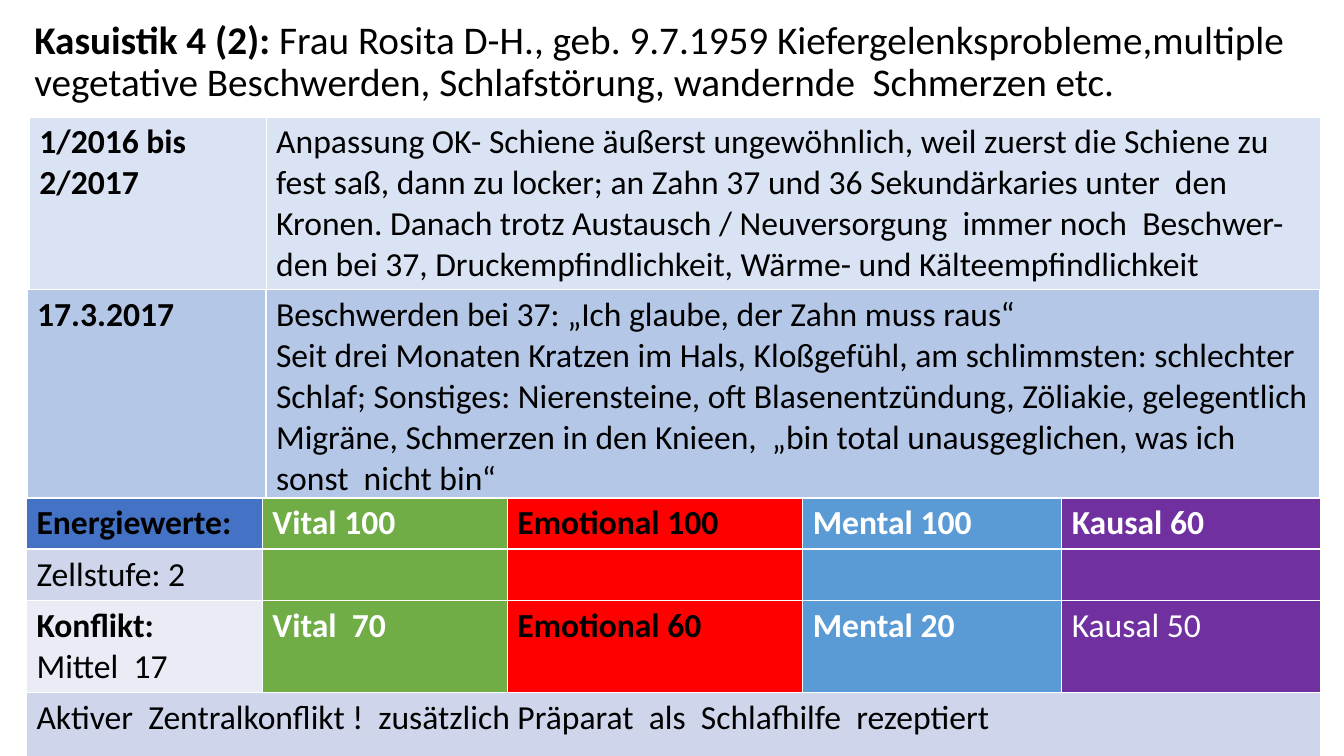
import pptx
import pptx.util
import pptx.dml.color
import pptx.enum.text

Pt = pptx.util.Pt
COLOURS = {
    "black": "000000", "white": "FFFFFF", "pale": "DAE3F3", "light": "B4C7E7",
    "blue": "4472C4", "green": "70AD47", "red": "FF0000", "sky": "5B9BD5",
    "purple": "7030A0", "band": "CFD5EA", "faint": "E9EBF5",
}


def add_span(para, text, bold, colour="black", size=24):
    span = para.add_run()
    span.text = text
    span.font.name = "Calibri"
    span.font.size = Pt(size)
    span.font.bold = bold
    span.font.color.rgb = pptx.dml.color.RGBColor.from_string(COLOURS[colour])


def add_grid(page, left, top, widths, heights, rows):
    frame = page.shapes.add_table(len(heights), len(widths), Pt(left), Pt(top),
                                  Pt(sum(widths)), Pt(sum(heights)))
    grid = frame.table
    for column, width in zip(grid.columns, widths):
        column.width = Pt(width)
    for line, height in zip(grid.rows, heights):
        line.height = Pt(height)
    for r, cells in enumerate(rows):
        for c, (fill, colour, lines) in enumerate(cells):
            cell = grid.cell(r, c)
            cell.fill.solid()
            cell.fill.fore_color.rgb = pptx.dml.color.RGBColor.from_string(COLOURS[fill])
            for i, (text, bold) in enumerate(lines):
                box = cell.text_frame
                para = box.add_paragraph() if i else box.paragraphs[0]
                add_span(para, text, bold, colour)
    return grid


deck = pptx.Presentation()
deck.slide_width = Pt(960)
deck.slide_height = Pt(540)
page = deck.slides.add_slide(deck.slide_layouts[5])

title = page.shapes.title
title.left, title.top, title.width, title.height = Pt(17.3), Pt(-7.2), Pt(928), Pt(104.4)
box = title.text_frame
box.word_wrap = True
box.auto_size = pptx.enum.text.MSO_AUTO_SIZE.NONE
box.vertical_anchor = pptx.enum.text.MSO_ANCHOR.MIDDLE
para = box.paragraphs[0]
para.alignment = pptx.enum.text.PP_ALIGN.LEFT
para.line_spacing = 0.9
add_span(para, "Kasuistik 4 (2):", True, size=28)
add_span(para, " Frau Rosita D-H., geb. 9.7.1959 Kiefergelenksprobleme,multiple "
         "vegetative Beschwerden, Schlafstörung, wandernde  Schmerzen etc.", False, size=28)

add_grid(page, 20.9, 83.5, [169.2, 753.1], [123.1], [[
    ("pale", "black", [("1/2016 bis  2/2017", True)]),
    ("pale", "black", [(
        "Anpassung OK- Schiene äußerst ungewöhnlich, weil zuerst die Schiene zu fest saß, "
        "dann zu locker; an Zahn 37 und 36 Sekundärkaries unter  den Kronen. Danach trotz "
        "Austausch / Neuversorgung  immer noch  Beschwer-den bei 37, Druckempfindlichkeit, "
        "Wärme- und Kälteempfindlichkeit", False)]),
]])

add_grid(page, 19.4, 206.6, [170.6, 752.4], [151.2], [[
    ("light", "black", [("17.3.2017", True)]),
    ("light", "black", [
        ("Beschwerden bei 37: „Ich glaube, der Zahn muss raus“", False),
        ("Seit drei Monaten Kratzen im Hals, Kloßgefühl, am schlimmsten: schlechter Schlaf; "
         "Sonstiges: Nierensteine, oft Blasenentzündung, Zöliakie, gelegentlich Migräne, "
         "Schmerzen in den Knieen,  „bin total unausgeglichen, was ich sonst  nicht bin“", False),
    ]),
]])

levels = [("green", "white"), ("red", "black"), ("sky", "white"), ("purple", "white")]
energy = ["Vital 100", "Emotional 100", "Mental 100", "Kausal 60"]
conflict = [("Vital  70", True), ("Emotional 60", True), ("Mental 20", True), ("Kausal 50", False)]
values = add_grid(page, 18.9, 355.7, [168.5, 175, 211, 185, 185], [32.4, 32.4, 59, 52.6], [
    [("blue", "black", [("Energiewerte:", True)])]
    + [(*level, [(text, True)]) for level, text in zip(levels, energy)],
    [("band", "black", [("Zellstufe: 2", False)])]
    + [(*level, []) for level in levels],
    [("faint", "black", [("Konflikt:", True), ("Mittel  17", False)])]
    + [(*level, [entry]) for level, entry in zip(levels, conflict)],
    [("band", "black", [(
        "Aktiver  Zentralkonflikt !  zusätzlich Präparat  als  Schlafhilfe  rezeptiert", False)])],
])
values.cell(3, 0).merge(values.cell(3, 4))

deck.save("out.pptx")
